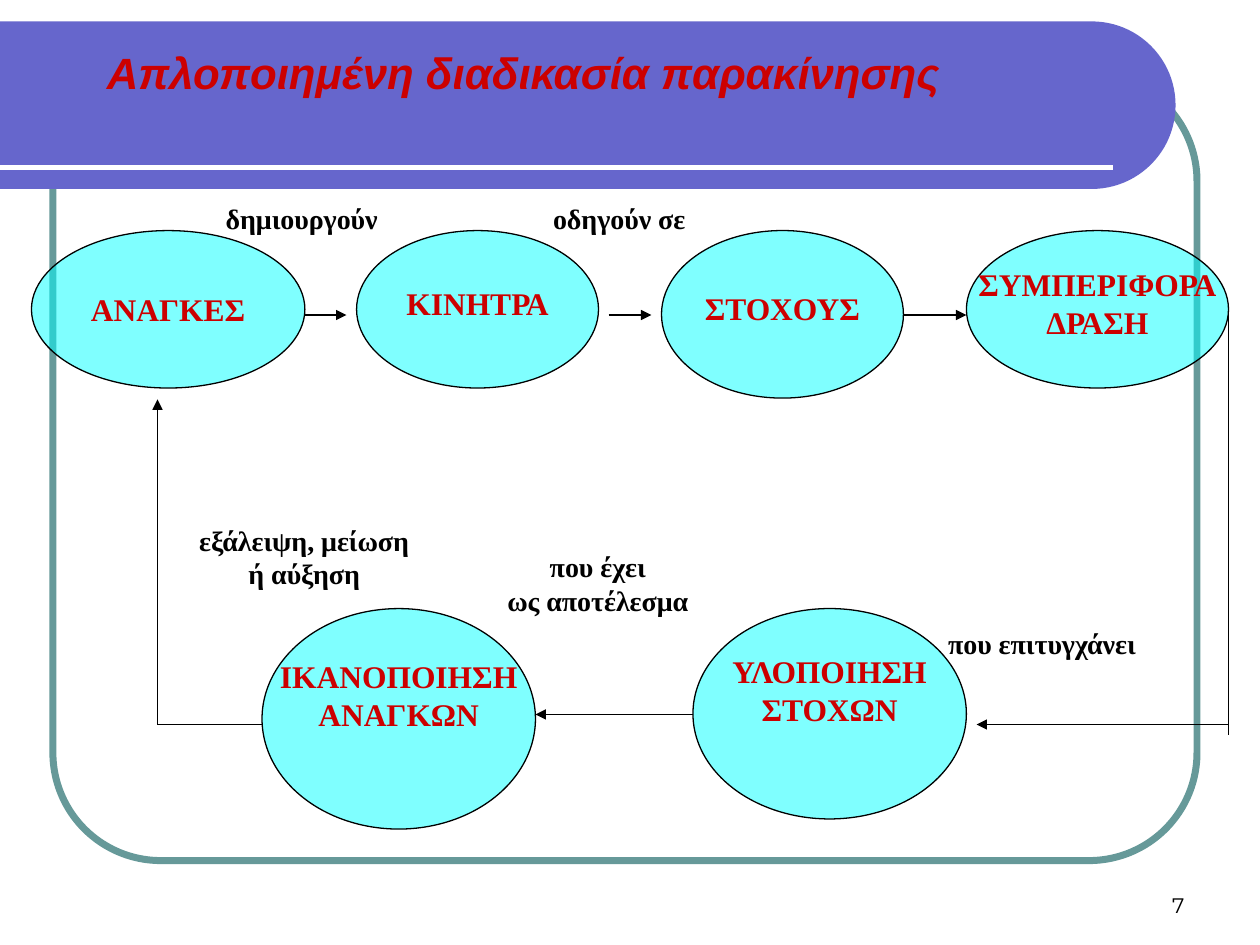
from dataclasses import dataclass

from lxml import etree
from pptx import Presentation
from pptx.dml.color import RGBColor
from pptx.enum.shapes import MSO_CONNECTOR as Connector, MSO_SHAPE as Shape
from pptx.enum.text import MSO_ANCHOR as Anchor, PP_ALIGN as Align
from pptx.oxml.ns import qn
from pptx.util import Inches, Pt

SERIF = "Times New Roman"
BLACK, WHITE, RED = "000000", "FFFFFF", "CC0000"
PURPLE, TEAL, CYAN = "6666CC", "669999", "00FFFF"
TITLE_FORMAT = {"name": "Arial", "size": Pt(25), "bold": True, "italic": True}
STAGE_FORMAT = {"name": SERIF, "size": Pt(18), "bold": True}
LABEL_FORMAT = {"name": SERIF, "size": Pt(16), "bold": True}
NUMBER_FORMAT = {"name": "Montserrat", "size": Pt(12)}


@dataclass
class Stage:
    lines: list[str]
    left: float
    top: float
    width: float
    height: float
    lift: float = 0  # extra bottom inset that raises the text


@dataclass
class Link:
    start: tuple[float, float]
    end: tuple[float, float]
    arrow: bool = True


@dataclass
class Label:
    lines: list[str]
    left: float
    top: float
    width: float
    height: float
    wrap: bool = False


TOP_ROW, BOTTOM_ROW = 1.83, 4.83
STAGES = [
    Stage(["ΑΝΑΓΚΕΣ"], 0.25, TOP_ROW, 2.17, 1.25),
    Stage(["ΚΙΝΗΤΡΑ"], 2.83, TOP_ROW, 1.92, 1.25, 0.1),
    Stage(["ΣΤΟΧΟΥΣ"], 5.25, TOP_ROW, 1.92, 1.33, 0.1),
    Stage(["ΣΥΜΠΕΡΙΦΟΡΑ", "ΔΡΑΣΗ"], 7.67, TOP_ROW, 2.08, 1.25, 0.1),
    Stage(["ΥΛΟΠΟΙΗΣΗ", "ΣΤΟΧΩΝ"], 5.5, BOTTOM_ROW, 2.17, 1.67, 0.38),
    Stage(["ΙΚΑΝΟΠΟΙΗΣΗ", "ΑΝΑΓΚΩΝ"], 2.08, BOTTOM_ROW, 2.17, 1.75, 0.38),
]
LINKS = [
    Link((2.42, 2.5), (2.75, 2.5)),
    Link((4.83, 2.5), (5.17, 2.5)),
    Link((7.17, 2.5), (7.67, 2.5)),
    Link((5.5, 5.67), (4.25, 5.67)),
    Link((9.75, 2.5), (9.75, 5.83), arrow=False),
    Link((9.75, 5.75), (7.75, 5.75)),
    Link((2.08, 5.75), (1.25, 5.75), arrow=False),
    Link((1.25, 5.75), (1.25, 3.17)),
]
LABELS = [
    Label(["δημιουργούν"], 1.69, 1.55, 1.41, 0.37),
    Label(["οδηγούν σε"], 4.26, 1.55, 1.31, 0.37),
    Label(["που επιτυγχάνει"], 7.42, 4.92, 1.7, 0.37),
    Label(["που έχει", "ως αποτέλεσμα"], 3.83, 4.31, 1.83, 0.64, True),
    Label(["εξάλειψη, μείωση", "ή αύξηση"], 1.33, 4.1, 2.17, 0.64, True),
]


def paint(color_format, color: str) -> None:
    color_format.rgb = RGBColor.from_string(color)


def write(frame, lines: list[str], font_format: dict, color: str,
          align=Align.CENTER, anchor=Anchor.MIDDLE, wrap: bool = False) -> None:
    frame.word_wrap = wrap
    frame.vertical_anchor = anchor
    for index, line in enumerate(lines):
        paragraph = frame.add_paragraph() if index else frame.paragraphs[0]
        paragraph.alignment = align
        run = paragraph.add_run()
        run.text = line
        for name, value in font_format.items():
            setattr(run.font, name, value)
        paint(run.font.color, color)


def add_text(slide, box: tuple, lines: list[str], font_format: dict,
             color: str, **layout):
    frame = slide.shapes.add_textbox(*map(Inches, box)).text_frame
    write(frame, lines, font_format, color, **layout)
    return frame


def add_line(slide, link: Link, color: str = BLACK, width: float = 0.75) -> None:
    line = slide.shapes.add_connector(
        Connector.STRAIGHT, *map(Inches, link.start + link.end))
    paint(line.line.color, color)
    line.line.width = Pt(width)
    properties = line._element.spPr
    if link.arrow:
        tail = etree.SubElement(properties.find(qn("a:ln")), qn("a:tailEnd"))
        tail.set("type", "triangle")
    etree.SubElement(properties, qn("a:effectLst"))


def add_stage(slide, stage: Stage) -> None:
    box = (stage.left, stage.top, stage.width, stage.height)
    ellipse = slide.shapes.add_shape(Shape.OVAL, *map(Inches, box))
    ellipse.shadow.inherit = False
    ellipse.fill.solid()
    paint(ellipse.fill.fore_color, CYAN)
    color = ellipse._element.spPr.find(qn("a:solidFill"))[0]
    etree.SubElement(color, qn("a:alpha")).set("val", "50000")
    paint(ellipse.line.color, BLACK)
    ellipse.line.width = Pt(0.75)
    ellipse.text_frame.margin_bottom = Inches(0.05 + stage.lift)
    write(ellipse.text_frame, stage.lines, STAGE_FORMAT, RED)


def add_background(slide) -> None:
    """Draw the rounded frame and the title band with its rule."""
    frame = slide.shapes.add_shape(
        Shape.ROUNDED_RECTANGLE, *map(Inches, (0.42, 0.58, 9.08, 6.25)))
    frame.adjustments[0] = 0.137
    frame.shadow.inherit = False
    frame.fill.background()
    paint(frame.line.color, TEAL)
    frame.line.width = Pt(4)

    band = slide.shapes.add_shape(
        Shape.ROUND_2_SAME_RECTANGLE, *map(Inches, (4, -3.83, 1.33, 9.33)))
    band.left, band.top = Inches(4.665 - 0.665), Inches(0.835 - 4.665)
    band.rotation = 90
    band.adjustments[0] = 0.5
    band.shadow.inherit = False
    band.fill.solid()
    paint(band.fill.fore_color, PURPLE)
    band.line.fill.background()
    add_line(slide, Link((0, 1.33), (8.83, 1.33), arrow=False), WHITE, 3)


def main() -> None:
    presentation = Presentation()
    presentation.slide_width = Inches(10)
    presentation.slide_height = Inches(7.5)
    slide = presentation.slides.add_slide(presentation.slide_layouts[6])

    add_background(slide)
    add_text(slide, (7.17, 6.83, 2.33, 0.5), ["7"], NUMBER_FORMAT, BLACK,
             align=Align.RIGHT, anchor=Anchor.BOTTOM, wrap=True)
    title = add_text(slide, (0.75, 0.36, 8.5, 0.92),
                     ["Απλοποιημένη διαδικασία παρακίνησης"], TITLE_FORMAT, RED,
                     align=Align.LEFT, anchor=Anchor.TOP, wrap=True)
    title.margin_top = 0

    for stage in STAGES:
        add_stage(slide, stage)
    for link in LINKS:
        add_line(slide, link)
    for label in LABELS:
        box = (label.left, label.top, label.width, label.height)
        add_text(slide, box, label.lines, LABEL_FORMAT, BLACK, wrap=label.wrap)

    presentation.save("out.pptx")


if __name__ == "__main__":
    main()
